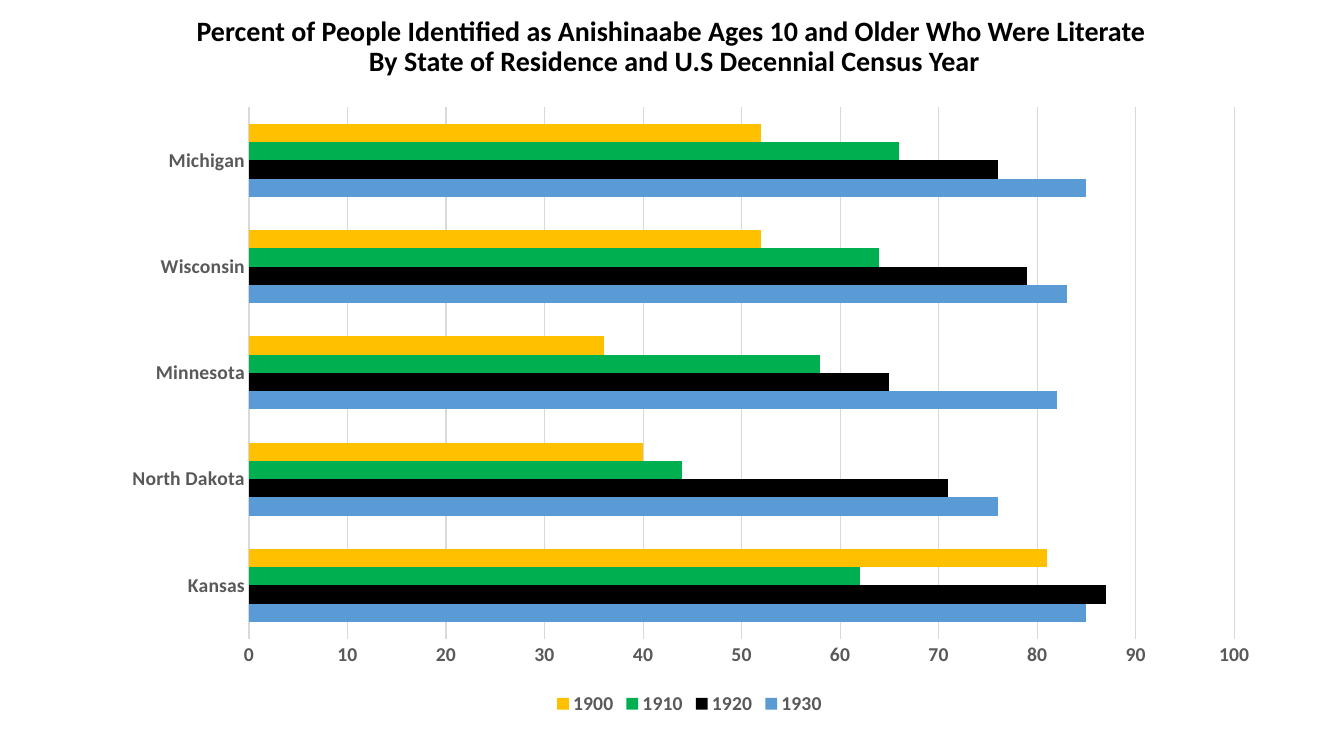
import pptx
import pptx.util
import pptx.oxml
import pptx.chart.data
import pptx.dml.color
import pptx.enum.chart
import pptx.enum.text
from dataclasses import dataclass
from pptx.util import Cm


@dataclass(frozen=True)
class Theme:
    font: str = "Calibri"
    ink: str = "000000"
    label: str = "595959"
    rule: str = "D9D9D9"
    head: int = 20
    small: int = 14
    line: float = 0.75
    bars: tuple = ("5B9BD5", "000000", "00B050", "FFC000")


THEME = Theme()
STATES = ("Kansas", "North Dakota", "Minnesota", "Wisconsin", "Michigan")
RATES = {
    "1930": (85, 76, 82, 83, 85),
    "1920": (87, 71, 65, 79, 76),
    "1910": (62, 44, 58, 64, 66),
    "1900": (81, 40, 36, 52, 52),
}
TITLE = (
    "Percent of People Identified as Anishinaabe Ages 10 and Older Who Were Literate",
    " By State of Residence and U.S Decennial Census Year",
)


def color(code):
    return pptx.dml.color.RGBColor.from_string(code)


def style(font, size, code, bold=True):
    font.name = THEME.font
    font.size = pptx.util.Pt(size)
    font.bold = bold
    font.color.rgb = color(code)


def stroke(line):
    line.color.rgb = color(THEME.rule)
    line.width = pptx.util.Pt(THEME.line)


def write(frame, lines, size, code, align, space):
    for i, text in enumerate(lines):
        para = frame.paragraphs[0] if i == 0 else frame.add_paragraph()
        para.alignment = align
        para.line_spacing = space
        run = para.add_run()
        run.text = text
        style(run.font, size, code)


def add_title(slide, box):
    frame = slide.shapes.add_textbox(*box).text_frame
    frame.word_wrap = True
    frame.vertical_anchor = pptx.enum.text.MSO_ANCHOR.MIDDLE
    write(frame, TITLE, size=THEME.head, code=THEME.ink,
          align=pptx.enum.text.PP_ALIGN.CENTER, space=0.9)


def place_plot(chart, x, y, w, h):
    area = chart._chartSpace.chart.plotArea
    for old in area.xpath("c:layout"):
        area.remove(old)
    space = "http://schemas.openxmlformats.org/drawingml/2006/chart"
    parts = (("layoutTarget", "inner"), ("xMode", "edge"), ("yMode", "edge"),
             ("x", x), ("y", y), ("w", w), ("h", h))
    body = "".join(f'<c:{tag} val="{val}"/>' for tag, val in parts)
    area.insert(0, pptx.oxml.parse_xml(
        f'<c:layout xmlns:c="{space}"><c:manualLayout>{body}</c:manualLayout></c:layout>'))


def add_rates(slide, box):
    data = pptx.chart.data.CategoryChartData()
    data.categories = STATES
    for year, vals in RATES.items():
        data.add_series(year, vals)
    kinds = pptx.enum.chart
    chart = slide.shapes.add_chart(kinds.XL_CHART_TYPE.BAR_CLUSTERED, *box, data).chart
    chart.has_title = False
    style(chart.font, THEME.small, THEME.label)
    place_plot(chart, x=0.12, y=0.02, w=0.85, h=0.85)

    plot = chart.plots[0]
    plot.gap_width = 182
    plot.overlap = 0
    plot.vary_by_categories = False
    for row, code in zip(plot.series, THEME.bars):
        row.format.fill.solid()
        row.format.fill.fore_color.rgb = color(code)

    for axis in (chart.category_axis, chart.value_axis):
        axis.major_tick_mark = kinds.XL_TICK_MARK.NONE
        axis.minor_tick_mark = kinds.XL_TICK_MARK.NONE
        style(axis.tick_labels.font, THEME.small, THEME.label)
    stroke(chart.category_axis.format.line)
    scale = chart.value_axis
    scale.minimum_scale, scale.maximum_scale, scale.major_unit = 0, 100, 10
    scale.format.line.fill.background()
    scale.has_major_gridlines = True
    stroke(scale.major_gridlines.format.line)

    chart.has_legend = True
    chart.legend.position = kinds.XL_LEGEND_POSITION.BOTTOM
    chart.legend.include_in_layout = False
    style(chart.legend.font, THEME.small, THEME.label)


def main():
    deck = pptx.Presentation()
    deck.slide_width, deck.slide_height = Cm(33.87), Cm(19.05)
    slide = deck.slides.add_slide(deck.slide_layouts[6])
    add_rates(slide, (Cm(2.77), Cm(2.39), Cm(29.21), Cm(15.75)))
    add_title(slide, (Cm(2.31), Cm(0.3), Cm(29.21), Cm(1.8)))
    deck.save("out.pptx")


if __name__ == "__main__":
    main()
